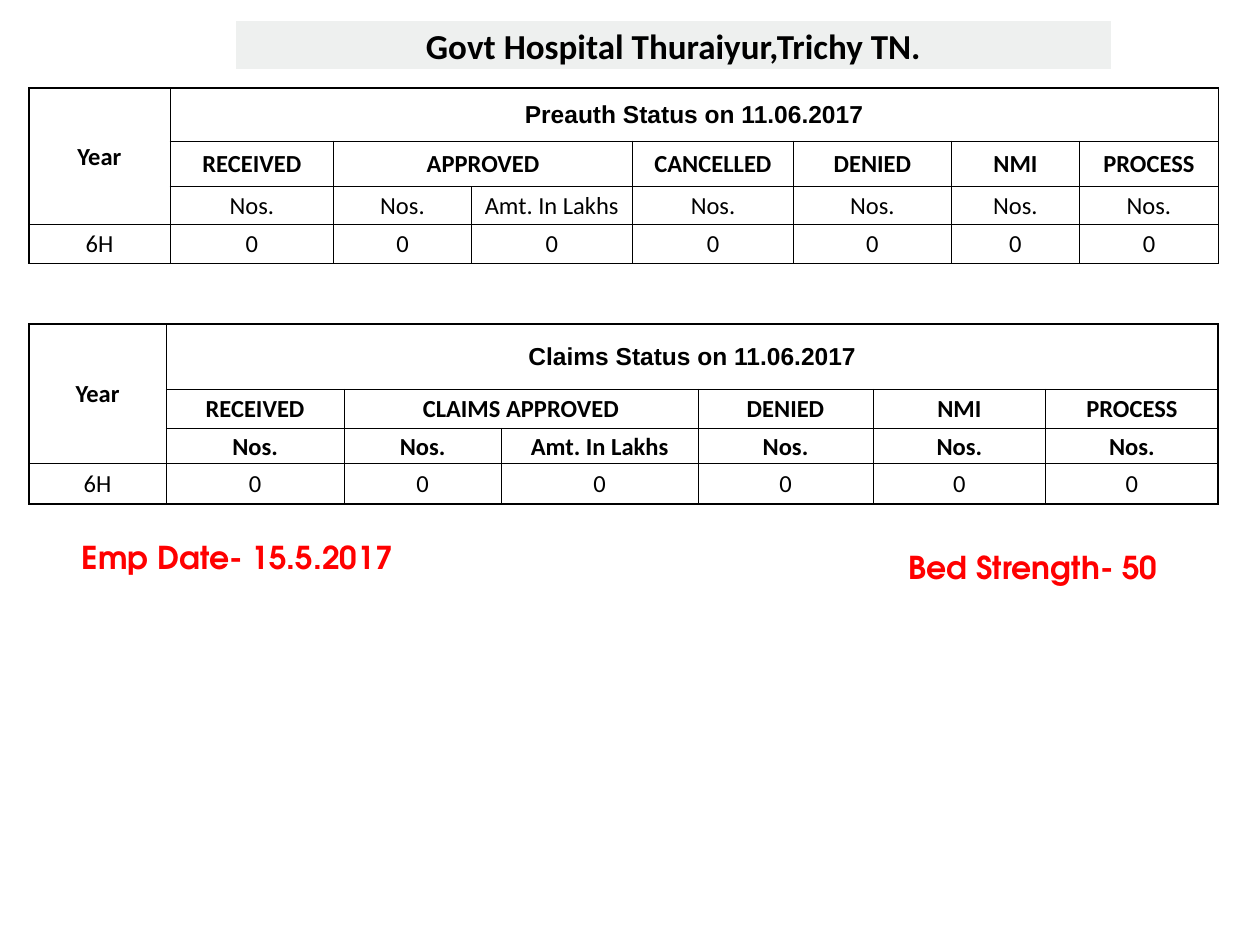
from lxml.etree import SubElement
from pptx import Presentation
from pptx.dml.color import RGBColor
from pptx.enum.text import MSO_ANCHOR, PP_ALIGN
from pptx.oxml.ns import qn
from pptx.util import Inches, Pt

BLACK = RGBColor(0, 0, 0)
WHITE = RGBColor(255, 255, 255)
GREY = RGBColor(0xEE, 0xF0, 0xEF)
RED = RGBColor(255, 0, 0)

BODY = {"name": "Calibri", "size": Pt(14), "bold": False}
HEAD = {**BODY, "bold": True}
BANNER = {**HEAD, "name": "Arial"}
TITLE = {**HEAD, "size": Pt(20)}
NOTE = {"name": "TeX Gyre Adventor", "size": Pt(18), "bold": True}


def write(tf, text, fmt, color, align=PP_ALIGN.LEFT):
    p = tf.paragraphs[0]
    p.alignment = align
    r = p.add_run()
    r.text = text
    for key, value in fmt.items():
        setattr(r.font, key, value)
    r.font.color.rgb = color


def set_borders(cell, color, widths):
    """Widths are in points, ordered left, right, top, bottom."""
    tcPr = cell._tc.get_or_add_tcPr()
    for side, width in zip("LRTB", widths):
        ln = SubElement(tcPr, qn(f"a:ln{side}"), w=str(Pt(width)))
        fill = SubElement(ln, qn("a:solidFill"))
        SubElement(fill, qn("a:srgbClr"), val=str(color))


def fill_cell(cell, text, fmt, color, anchor):
    cell.fill.solid()
    cell.fill.fore_color.rgb = color
    cell.margin_left = cell.margin_right = cell.margin_top = Inches(0.01)
    cell.margin_bottom = 0
    cell.vertical_anchor = anchor
    write(cell.text_frame, text, fmt, BLACK, PP_ALIGN.CENTER)


def add_grid(s, left, top, cols, rows):
    frame = s.shapes.add_table(len(rows), len(cols), Inches(left), Inches(top),
                               Inches(sum(cols)), Inches(sum(rows)))
    table = frame.table
    table.first_row = table.horz_banding = False
    for col, width in zip(table.columns, cols):
        col.width = Inches(width)
    for row, height in zip(table.rows, rows):
        row.height = Inches(height)
    return table


def add_title(s, text):
    cell = add_grid(s, 1.87, 0.16, [6.95], [0.39]).cell(0, 0)
    set_borders(cell, WHITE, [1] * 4)
    fill_cell(cell, text, TITLE, GREY, MSO_ANCHOR.BOTTOM)


def add_status(s, top, cols, rows, banner, groups, unit_fmt):
    table = add_grid(s, 0.23, top, cols, rows)
    n = len(cols)
    last_row = len(rows) - 1

    # Year, banner and the two approved columns span several cells
    for first, last in [((0, 0), (2, 0)), ((0, 1), (0, n - 1)), ((1, 2), (1, 3))]:
        table.cell(*first).merge(table.cell(*last))

    units = ["Nos."] * (n - 1)
    units[2] = "Amt. In Lakhs"
    lines = [
        (["Year", banner], [HEAD] + [BANNER]),
        ([None, *groups[:2], None, *groups[2:]], [HEAD] * n),
        ([None, *units], [unit_fmt] * n),
        (["6H"] + ["0"] * (n - 1), [BODY] * n),
    ]
    for i, (texts, formats) in enumerate(lines):
        for j, (text, fmt) in enumerate(zip(texts, formats)):
            cell = table.cell(i, j)
            if cell.is_spanned:
                continue
            right = j + (cell.span_width if cell.is_merge_origin else 1)
            # Outer edges are twice as thick as inner ones
            outer = [j == 0, right == n, i == 0, i == last_row]
            set_borders(cell, BLACK, [1 if edge else 0.5 for edge in outer])
            fill_cell(cell, text, fmt, WHITE, MSO_ANCHOR.MIDDLE)


def add_note(s, left, top, width, text, wrap):
    tf = s.shapes.add_textbox(Inches(left), Inches(top),
                              Inches(width), Inches(0.4)).text_frame
    tf.word_wrap = wrap
    write(tf, text, NOTE, RED)


def main():
    prs = Presentation()
    prs.slide_width, prs.slide_height = Inches(10), Inches(7.5)
    s = prs.slides.add_slide(prs.slide_layouts[6])

    add_title(s, "Govt Hospital Thuraiyur,Trichy TN.")

    # Status tables
    add_status(s, 0.7, [1.12, 1.3, 1.09, 1.28, 1.28, 1.25, 1.02, 1.1],
               [0.42, 0.36, 0.3, 0.31], "Preauth Status on 11.06.2017",
               ["RECEIVED", "APPROVED", "CANCELLED", "DENIED", "NMI", "PROCESS"],
               BODY)
    add_status(s, 2.57, [1.09, 1.41, 1.25, 1.56, 1.39, 1.37, 1.37],
               [0.52, 0.31, 0.28, 0.32], "Claims Status on 11.06.2017",
               ["RECEIVED", "CLAIMS APPROVED", "DENIED", "NMI", "PROCESS"],
               HEAD)

    # Notes below the tables
    add_note(s, 7.11, 4.3, 2.2, "Bed Strength- 50", True)
    add_note(s, 0.55, 4.22, 2.7, "Emp Date- 15.5.2017", False)

    prs.save("out.pptx")


if __name__ == "__main__":
    main()
